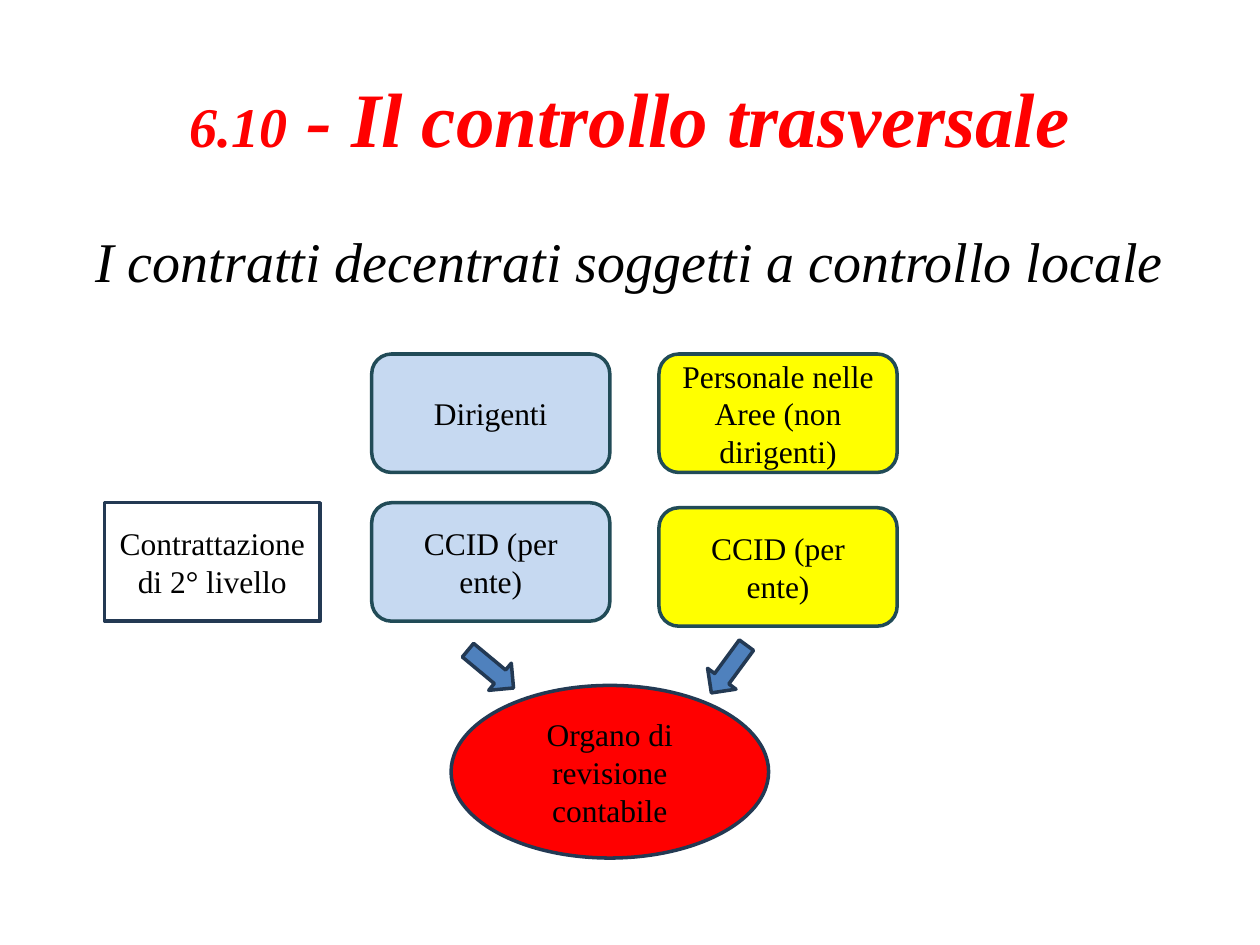
"""Build the slide on cross-cutting control of local contracts."""
from pptx import Presentation
from pptx.dml.color import RGBColor as Rgb
from pptx.enum.shapes import MSO_SHAPE as Kind
from pptx.enum.text import MSO_ANCHOR as Anchor, PP_ALIGN as Align
from pptx.util import Inches, Pt

FONT = "Times New Roman"
HUES = {"red": "FF0000", "black": "000000", "sky": "C6D9F1", "yellow": "FFFF00",
        "blue": "4F81BD", "teal": "214B57", "navy": "233953"}

TITLE = [("6.10", 32), (" - Il controllo trasversale", 44)]
LEAD = [("I contratti decentrati soggetti a controllo locale", 32)]
STAFF = [
    (2.95, "sky", [("Dirigenti", 2.81), ("CCID (per ente)", 3.99)]),
    (5.23, "yellow", [("Personale nelle Aree (non dirigenti)", 2.81),
                      ("CCID (per ente)", 4.03)]),
]
LEVEL = "Contrattazione di 2° livello"
BOARD = "Organo di revisione contabile"
ARROWS = [(5.55, 306.3), (3.66, 219.7)]


def write(frame, parts, hue="black", bold=False, slant=False):
    frame.word_wrap = True
    para = frame.paragraphs[0]
    para.alignment = Align.CENTER
    for words, size in parts:
        run = para.add_run()
        run.text = words
        font = run.font
        font.name, font.size = FONT, Pt(size)
        font.bold, font.italic = bold, slant
        font.color.rgb = Rgb.from_string(HUES[hue])
    return para


def head(slide, area, anchor, parts, **style):
    frame = slide.shapes.add_textbox(*map(Inches, area)).text_frame
    frame.vertical_anchor = anchor
    return write(frame, parts, slant=True, **style)


def draw(slide, kind, area, fill, edge="navy", words=None):
    shape = slide.shapes.add_shape(kind, *map(Inches, area))
    shape.shadow.inherit = False
    if fill:
        shape.fill.solid()
        shape.fill.fore_color.rgb = Rgb.from_string(HUES[fill])
    else:
        shape.fill.background()
    shape.line.color.rgb = Rgb.from_string(HUES[edge])
    shape.line.width = Pt(2)
    if words:
        shape.text_frame.vertical_anchor = Anchor.MIDDLE
        write(shape.text_frame, [(words, 18)])
    return shape


def main():
    deck = Presentation()
    deck.slide_width, deck.slide_height = Inches(10), Inches(7.5)
    slide = deck.slides.add_slide(deck.slide_layouts[6])

    head(slide, (0.5, 0.3, 9, 1.25), Anchor.MIDDLE, TITLE, hue="red", bold=True)
    lead = head(slide, (0.5, 1.75, 9, 0.75), Anchor.TOP, LEAD)
    lead.space_before = Pt(6.4)

    for left, fill, boxes in STAFF:
        for words, top in boxes:
            draw(slide, Kind.ROUNDED_RECTANGLE, (left, top, 1.89, 0.94),
                 fill, "teal", words)
    draw(slide, Kind.RECTANGLE, (0.83, 3.99, 1.71, 0.94), None, words=LEVEL)
    draw(slide, Kind.OVAL, (3.58, 5.44, 2.52, 1.37), "red", words=BOARD)
    for left, turn in ARROWS:
        arrow = draw(slide, Kind.LEFT_ARROW, (left, 5.17, 0.47, 0.28), "blue")
        arrow.rotation = turn

    deck.save("out.pptx")


if __name__ == "__main__":
    main()
